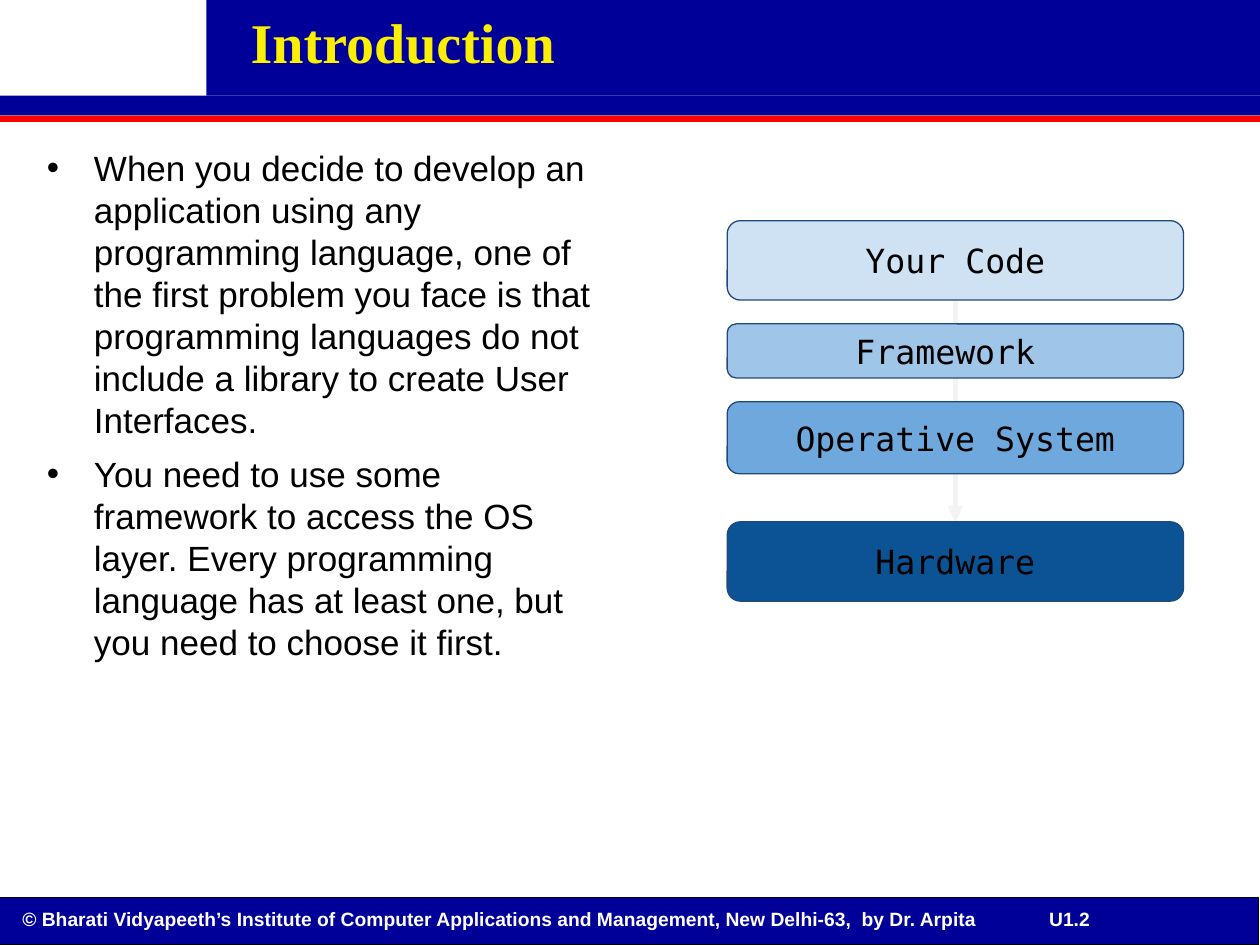
from lxml.etree import SubElement
from pptx import Presentation
from pptx.dml.color import RGBColor
from pptx.enum.shapes import MSO_CONNECTOR, MSO_SHAPE
from pptx.enum.text import MSO_ANCHOR, MSO_AUTO_SIZE, PP_ALIGN
from pptx.oxml.ns import qn
from pptx.util import Cm, Pt

NAVY = RGBColor(0x00, 0x00, 0x99)
RED = RGBColor(0xFF, 0x00, 0x00)
YELLOW = RGBColor(0xFB, 0xEF, 0x03)
BLACK = RGBColor(0x00, 0x00, 0x00)
WHITE = RGBColor(0xFF, 0xFF, 0xFF)
ARROW_GREY = RGBColor(0xF3, 0xF3, 0xF3)
OUTLINE = RGBColor(0x1F, 0x49, 0x7D)

LAYER_LEFT, LAYER_WIDTH = 14.66, 9.2

# Name, top and height in cm, fill
LAYERS = [
    ("Your Code", 4.45, 1.6, RGBColor(0xCF, 0xE2, 0xF3)),
    ("Framework ", 6.53, 1.09, RGBColor(0x9F, 0xC5, 0xE8)),
    ("Operative System", 8.1, 1.45, RGBColor(0x6F, 0xA8, 0xDC)),
    ("Hardware", 10.52, 1.6, RGBColor(0x0B, 0x53, 0x94)),
]

POINTS = [
    "When you decide to develop an application using any programming language, "
    "one of the first problem you face is that programming languages do not "
    "include a library to create User Interfaces.",
    "You need to use some framework to access the OS layer. Every programming "
    "language has at least one, but you need to choose it first.",
]

FOOTER = ("© Bharati Vidyapeeth’s Institute of Computer Applications and "
          "Management, New Delhi-63,  by Dr. Arpita\tU1.2")


def set_font(paragraph, name, size, color, bold=False):
    font = paragraph.font
    font.name, font.size, font.bold = name, Pt(size), bold
    font.color.rgb = color


def place(shape, left, top, width, height):
    shape.left, shape.top = Cm(left), Cm(top)
    shape.width, shape.height = Cm(width), Cm(height)


def bring_to_front(shape):
    shape.element.getparent().append(shape.element)


def add_box(slide, preset, left, top, width, height, fill, line=None):
    shape = slide.shapes.add_shape(preset, Cm(left), Cm(top), Cm(width), Cm(height))
    shape.shadow.inherit = False
    shape.fill.solid()
    shape.fill.fore_color.rgb = fill
    if line is None:
        shape.line.fill.background()
    else:
        shape.line.color.rgb = line
        shape.line.width = Pt(0.75)
    return shape


def add_layer(slide, name, top, height, fill):
    shape = add_box(slide, MSO_SHAPE.ROUNDED_RECTANGLE, LAYER_LEFT, top,
                    LAYER_WIDTH, height, fill, OUTLINE)
    frame = shape.text_frame
    frame.vertical_anchor = MSO_ANCHOR.MIDDLE
    frame.margin_top = frame.margin_bottom = Cm(0.25)
    frame.text = name
    paragraph = frame.paragraphs[0]
    paragraph.alignment = PP_ALIGN.CENTER
    set_font(paragraph, "DejaVu Sans Mono", 19, BLACK)


def add_arrow(slide, x, top, bottom):
    arrow = slide.shapes.add_connector(MSO_CONNECTOR.STRAIGHT,
                                       Cm(x), Cm(top), Cm(x), Cm(bottom))
    arrow.line.color.rgb = ARROW_GREY
    arrow.line.width = Pt(3)
    SubElement(arrow.line._get_or_add_ln(), qn("a:tailEnd"), type="triangle")
    SubElement(arrow.element.spPr, qn("a:effectLst"))


def add_footer(slide):
    box = slide.shapes.add_textbox(Cm(0.2), Cm(18.16), Cm(25.17), Cm(0.74))
    frame = box.text_frame
    frame.word_wrap = True
    frame.text = FOOTER
    paragraph = frame.paragraphs[0]
    tabs = SubElement(paragraph._p.get_or_add_pPr(), qn("a:tabLst"))
    SubElement(tabs, qn("a:tab"), pos=str(Cm(20.7)), algn="l")
    set_font(paragraph, "Arial", 11, WHITE, bold=True)


def add_bullet(paragraph):
    properties = paragraph._p.get_or_add_pPr()
    properties.set("marL", str(Cm(0.95)))
    properties.set("indent", str(Cm(-0.95)))
    color = SubElement(properties, qn("a:buClr"))
    SubElement(color, qn("a:srgbClr"), val=str(BLACK))
    SubElement(properties, qn("a:buFont"), typeface="Arial")
    SubElement(properties, qn("a:buChar"), char="•")


def fill_title(title, text):
    place(title, 4.8, 0.03, 19.69, 1.9)
    frame = title.text_frame
    frame.auto_size = MSO_AUTO_SIZE.NONE
    frame.vertical_anchor = MSO_ANCHOR.TOP
    frame.text = text
    paragraph = frame.paragraphs[0]
    paragraph.alignment = PP_ALIGN.LEFT
    set_font(paragraph, "Times New Roman", 32, YELLOW, bold=True)
    bring_to_front(title)


def fill_body(body, points):
    place(body, 0.69, 2.82, 11.89, 14.5)
    frame = body.text_frame
    frame.auto_size = MSO_AUTO_SIZE.NONE
    frame.text = "\n".join(points)
    for index, paragraph in enumerate(frame.paragraphs):
        add_bullet(paragraph)
        paragraph.space_before = Pt(7 if index else 0)
        set_font(paragraph, "Arial", 20, BLACK)
    bring_to_front(body)


def main():
    presentation = Presentation()
    presentation.slide_width, presentation.slide_height = Cm(25.4), Cm(19.05)
    slide = presentation.slides.add_slide(presentation.slide_layouts[1])

    # Footer and header bands
    rectangle = MSO_SHAPE.RECTANGLE
    add_box(slide, rectangle, -0.03, 18.1, 25.4, 0.95, NAVY, BLACK)
    add_footer(slide)
    add_box(slide, rectangle, 0, 2.33, 25.4, 0.13, RED)
    add_box(slide, rectangle, 4.16, 0, 21.24, 1.93, NAVY)
    add_box(slide, rectangle, 0, 1.93, 25.4, 0.4, NAVY)

    # Title and bullet list
    fill_body(slide.placeholders[1], POINTS)
    fill_title(slide.shapes.title, "Introduction")

    # Software stack, with the arrow behind the layers
    _, first_top, first_height, _ = LAYERS[0]
    add_arrow(slide, LAYER_LEFT + LAYER_WIDTH / 2,
              first_top + first_height, LAYERS[-1][1])
    for layer in LAYERS:
        add_layer(slide, *layer)

    presentation.save("out.pptx")


if __name__ == "__main__":
    main()
